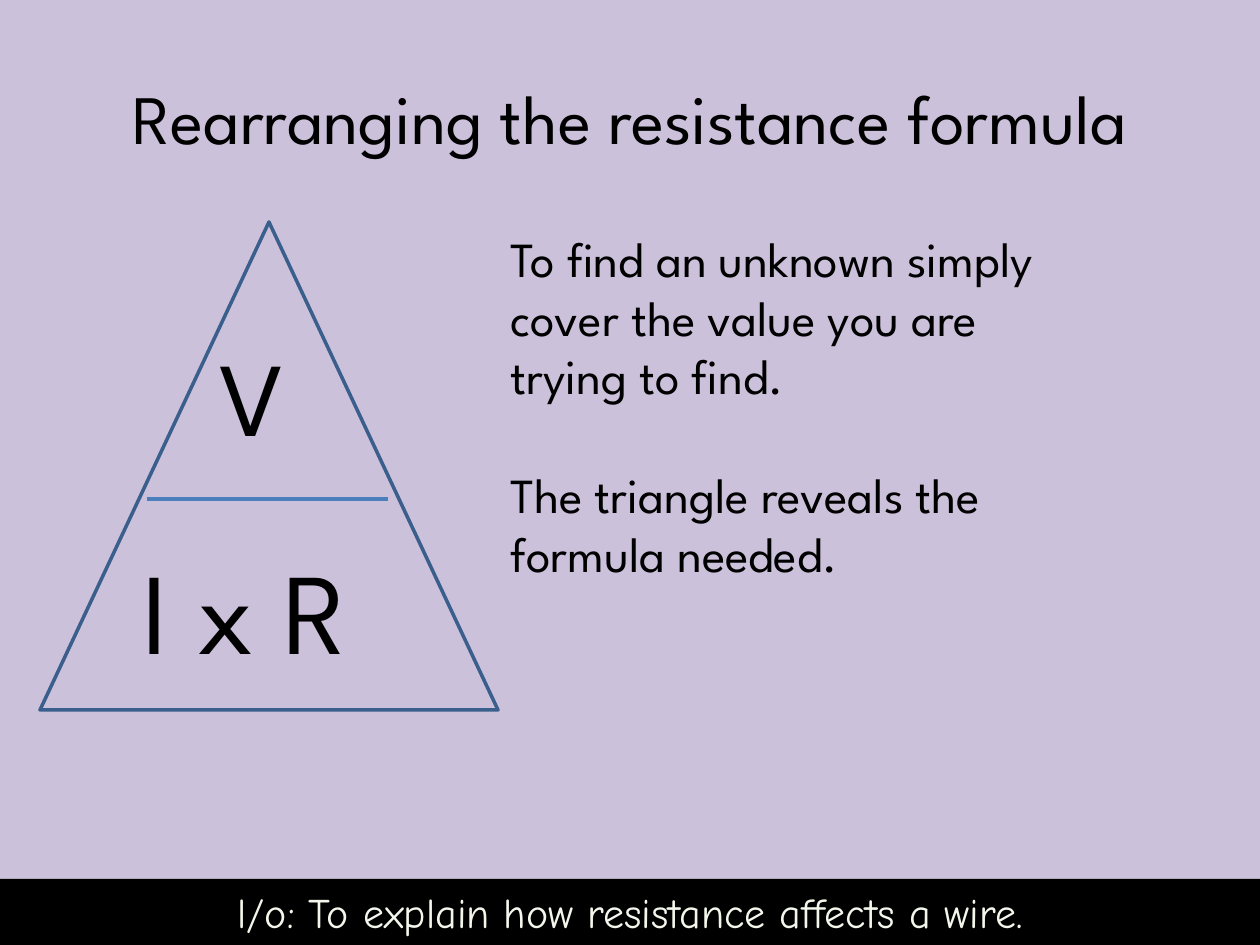
from lxml.etree import SubElement
from pptx import Presentation
from pptx.dml.color import RGBColor
from pptx.enum.shapes import MSO_CONNECTOR, MSO_SHAPE
from pptx.enum.text import MSO_ANCHOR, PP_ALIGN
from pptx.oxml.ns import qn
from pptx.util import Pt

PX = 914400 / 126


def px(*values):
    return [round(v * PX) for v in values]


def rgb(value):
    return RGBColor.from_string(value)


prs = Presentation()
prs.slide_width, prs.slide_height = px(1260, 945)
s = prs.slides.add_slide(prs.slide_layouts[5])
s.background.fill.solid()
s.background.fill.fore_color.rgb = rgb("CCC1DA")

title = s.shapes.title
title.left, title.top, title.width, title.height = px(63, 38, 1134, 157)

triangle = s.shapes.add_shape(MSO_SHAPE.ISOSCELES_TRIANGLE, *px(40, 222, 458, 488))
triangle.shadow.inherit = False
triangle.fill.background()
triangle.line.color.rgb = rgb("3A5F8C")
triangle.line.width = Pt(2)

product = s.shapes.add_textbox(*px(130, 533, 275, 152))
voltage = s.shapes.add_textbox(*px(207, 325, 125, 140))

divider = s.shapes.add_connector(MSO_CONNECTOR.STRAIGHT, *px(147, 499, 388, 499))
divider.line.color.rgb = rgb("4B7EBC")
divider.line.width = Pt(2.25)
SubElement(divider._element.spPr, qn("a:effectLst"))

method = s.shapes.add_textbox(*px(498, 222, 581, 369))

bar = s.shapes.add_shape(MSO_SHAPE.RECTANGLE, *px(0, 879, 1260, 66))
bar.shadow.inherit = False
bar.fill.solid()
bar.fill.fore_color.rgb = rgb("000000")
bar.line.fill.background()

SPARTAN, COMIC = "League Spartan", "Comic Neue"
LEFT, CENTER = PP_ALIGN.LEFT, PP_ALIGN.CENTER
TOP, MIDDLE = MSO_ANCHOR.TOP, MSO_ANCHOR.MIDDLE
texts = [
    (title, ["Rearranging the resistance formula"], SPARTAN, 39.6, "000000", CENTER, MIDDLE),
    (product, ["I x R"], SPARTAN, 66, "000000", LEFT, TOP),
    (voltage, ["V"], SPARTAN, 60, "000000", LEFT, TOP),
    (method, ["To find an unknown simply cover the value you are trying to find.",
              "The triangle reveals the formula needed."], SPARTAN, 28, "000000", LEFT, TOP),
    (bar, ["l/o: To explain how resistance affects a wire."], COMIC, 24, "F3F7EB", CENTER, MIDDLE),
]
for sp, lines, font, size, color, align, anchor in texts:
    tf = sp.text_frame
    tf.word_wrap = True
    tf.vertical_anchor = anchor
    for i, line in enumerate(lines):
        p = tf.paragraphs[0] if i == 0 else tf.add_paragraph()
        p.alignment = align
        if i:
            p.space_before = Pt(34)
        r = p.add_run()
        r.text = line
        for name, value in {"name": font, "size": Pt(size)}.items():
            setattr(r.font, name, value)
        r.font.color.rgb = rgb(color)

prs.save("out.pptx")
